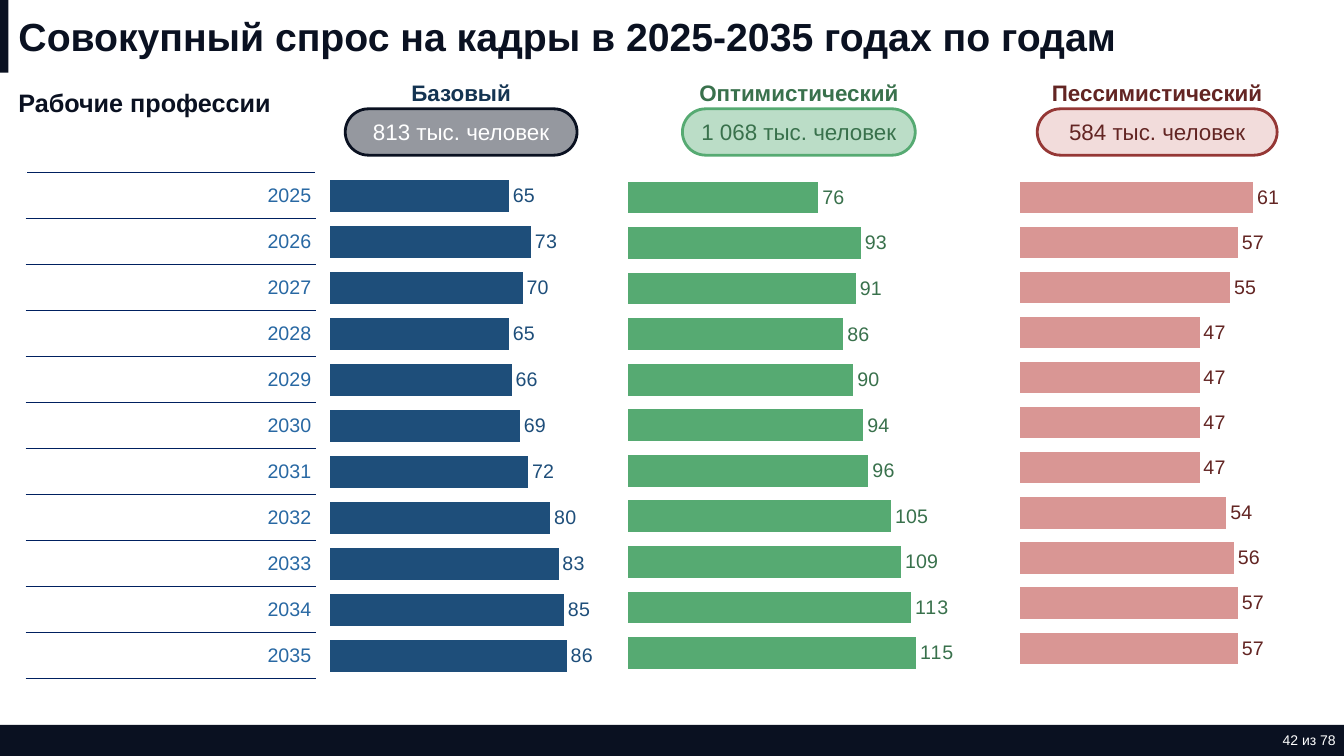
from dataclasses import dataclass

import lxml.etree
import pptx
import pptx.chart.data
import pptx.dml.color
import pptx.enum.chart
import pptx.enum.shapes
import pptx.enum.text
import pptx.oxml
import pptx.oxml.ns
import pptx.util

COLS, ROWS = 160, 90
CELL = pptx.util.Inches(7.5) / ROWS
NAVY, WHITE = "0A1121", "FFFFFF"
BAR_H = 8.64
FOOT_Y, FOOT_H = 86.28, 3.72
HEAD_Y, PILL_Y, PILL_H = 8.28, 12.96, 5.52
CHART_Y = 18.48
YEARS = range(2025, 2036)
ALIGN = pptx.enum.text.PP_ALIGN
MIDDLE = pptx.enum.text.MSO_ANCHOR.MIDDLE
SHAPE = pptx.enum.shapes.MSO_SHAPE


@dataclass
class Case:
    name: str
    total: str
    mid: float
    head_w: float
    pill_w: float
    ink: str
    fill: str
    line: str
    pill_ink: str
    bar: str
    tag: str
    left: float
    width: float
    height: float
    plot: tuple[float, float, float, float]
    top: int
    vals: tuple[int, ...]
    alpha: int = 100


CASES = [
    Case("Базовый", "813 тыс. человек", 54.9, 27, 27.6,
         "143452", NAVY, NAVY, WHITE, "1E4E7A", "1E4E7A",
         38.28, 34.44, 63.6, (0.029, 0.033, 0.857, 0.947), 90,
         (65, 73, 70, 65, 66, 69, 72, 80, 83, 85, 86), alpha=43),
    Case("Оптимистический", "1 068 тыс. человек", 95.1, 27, 27.72,
         "39714C", "BBDDC7", "56AA72", "39714C", "56AA72", "39714C",
         73.44, 43.68, 63.24, (0.029, 0.037, 0.958, 0.943), 140,
         (76, 93, 91, 86, 90, 94, 96, 105, 109, 113, 115)),
    Case("Пессимистический", "584 тыс. человек", 137.76, 30, 28.56,
         "632523", "F2DCDB", "953735", "632523", "D99694", "632523",
         120.36, 35.64, 62.64, (0.029, 0.037, 0.895, 0.943), 70,
         (61, 57, 55, 47, 47, 47, 47, 54, 56, 57, 57)),
]


def span(*cells: float) -> list[int]:
    """Turn grid cells into slide lengths."""
    return [pptx.util.Emu(round(n * CELL)) for n in cells]


def paint(target, hue: str) -> None:
    """Give a fill a solid colour, or a font or line its colour."""
    if hasattr(target, "solid"):
        target.solid()
        target = target.fore_color
    else:
        target = target.color
    target.rgb = pptx.dml.color.RGBColor.from_string(hue)


def style(font, size: float, hue: str, bold: bool = False) -> None:
    font.name, font.size, font.bold = "Arial", pptx.util.Pt(size), bold
    paint(font, hue)


def write(frame, text: str, size: float, hue: str, bold: bool = False,
          align=ALIGN.LEFT) -> None:
    frame.text = text
    frame.word_wrap = True
    frame.vertical_anchor = MIDDLE
    line = frame.paragraphs[0]
    line.alignment = align
    style(line.font, size, hue, bold)


def add_text(slide, box: list[int], *args, **kwargs):
    frame = slide.shapes.add_textbox(*box).text_frame
    write(frame, *args, **kwargs)
    return frame


def add_block(slide, kind, box: list[int], hue: str):
    block = slide.shapes.add_shape(kind, *box)
    block.shadow.inherit = False
    paint(block.fill, hue)
    block.line.fill.background()
    return block


def add_pill(slide, case: Case) -> None:
    box = span(case.mid - case.pill_w / 2, PILL_Y, case.pill_w, PILL_H)
    pill = add_block(slide, SHAPE.ROUNDED_RECTANGLE, box, case.fill)
    pill.adjustments[0] = 0.5
    paint(pill.line, case.line)
    pill.line.width = pptx.util.Pt(2)
    if case.alpha < 100:
        tint = pill._element.spPr.find(pptx.oxml.ns.qn("a:solidFill"))[0]
        lxml.etree.SubElement(tint, pptx.oxml.ns.qn("a:alpha"),
                              val=str(case.alpha * 1000))
    write(pill.text_frame, case.total, 16, case.pill_ink, align=ALIGN.CENTER)


def set_plot(chart, plot: tuple[float, float, float, float]) -> None:
    """Fix the inner plot area as shares of the chart."""
    area = chart._chartSpace.chart.plotArea
    for old in area.findall(pptx.oxml.ns.qn("c:layout")):
        area.remove(old)
    modes = '<c:xMode val="edge"/><c:yMode val="edge"/>'
    parts = "".join(f'<c:{k} val="{n}"/>' for k, n in zip("xywh", plot))
    area.insert(0, pptx.oxml.parse_xml(
        f'<c:layout {pptx.oxml.ns.nsdecls("c")}><c:manualLayout>'
        f'<c:layoutTarget val="inner"/>{modes}{parts}'
        '</c:manualLayout></c:layout>'))


def add_bars(slide, case: Case) -> None:
    data = pptx.chart.data.CategoryChartData(number_format="#,##0")
    data.categories = [str(n) for n in range(1, len(case.vals) + 1)]
    data.add_series("Series 1", case.vals[::-1])
    chart = slide.shapes.add_chart(
        pptx.enum.chart.XL_CHART_TYPE.BAR_CLUSTERED,
        *span(case.left, CHART_Y, case.width, case.height), data).chart
    style(chart.font, 10, "000000")
    chart.has_title = chart.has_legend = False
    for axis in (chart.category_axis, chart.value_axis):
        axis.visible = axis.has_major_gridlines = False
    chart.value_axis.minimum_scale = 0
    chart.value_axis.maximum_scale = case.top
    set_plot(chart, case.plot)

    plot = chart.plots[0]
    plot.gap_width = 44
    plot.vary_by_categories = False
    bars = plot.series[0]
    paint(bars.format.fill, case.bar)
    tags = bars.data_labels
    tags.show_value = True
    tags.position = pptx.enum.chart.XL_LABEL_POSITION.OUTSIDE_END
    tags.number_format, tags.number_format_is_linked = "#,##0", False
    style(tags.font, 14, case.tag)


def rule(cell, side: str) -> None:
    """Draw a thin line along one side of a table cell."""
    cell._tc.get_or_add_tcPr().append(pptx.oxml.parse_xml(
        f'<a:ln{side} {pptx.oxml.ns.nsdecls("a")} w="3175"><a:solidFill>'
        f'<a:srgbClr val="002060"/></a:solidFill></a:ln{side}>'))


def add_years(slide) -> None:
    row_h = 5.48
    table = slide.shapes.add_table(
        len(YEARS), 1, *span(3.12, 20.52, 34.44, row_h * len(YEARS))).table
    table.first_row = table.horz_banding = False
    for cell, year in zip(table.iter_cells(), YEARS):
        write(cell.text_frame, str(year), 14, "2868A3", align=ALIGN.RIGHT)
        cell.vertical_anchor = MIDDLE
        cell.margin_left, cell.margin_right = span(0.12, 0.5)
        cell.margin_top = cell.margin_bottom = 0
        for side in "TB":
            rule(cell, side)
        cell.fill.background()


def main() -> None:
    deck = pptx.Presentation()
    deck.slide_width, deck.slide_height = span(COLS, ROWS)
    slide = deck.slides.add_slide(deck.slide_layouts[5])

    title = slide.shapes.title
    title.left, title.top, title.width, title.height = span(
        1, 0, COLS - 1, BAR_H)
    write(title.text_frame, "Совокупный спрос на кадры в 2025-2035 годах по годам",
          28, NAVY, bold=True)
    title.text_frame.auto_size = pptx.enum.text.MSO_AUTO_SIZE.NONE

    add_block(slide, SHAPE.RECTANGLE, span(0, FOOT_Y, COLS, FOOT_H), NAVY)
    add_block(slide, SHAPE.RECTANGLE, span(0, 0, 1, BAR_H), NAVY)
    page = add_text(slide, span(144.5, FOOT_Y, 14.5, FOOT_H),
                    "42 из 78", 10, WHITE, align=ALIGN.RIGHT)
    page.margin_right = 0
    add_text(slide, span(1, 9.24, 40.44, 6), "Рабочие профессии",
             18, NAVY, bold=True)

    add_years(slide)
    for case in CASES:
        add_text(slide,
                 span(case.mid - case.head_w / 2, HEAD_Y, case.head_w, PILL_H),
                 case.name, 16, case.ink, bold=True, align=ALIGN.CENTER)
        add_bars(slide, case)
        add_pill(slide, case)
    deck.save("out.pptx")


if __name__ == "__main__":
    main()
